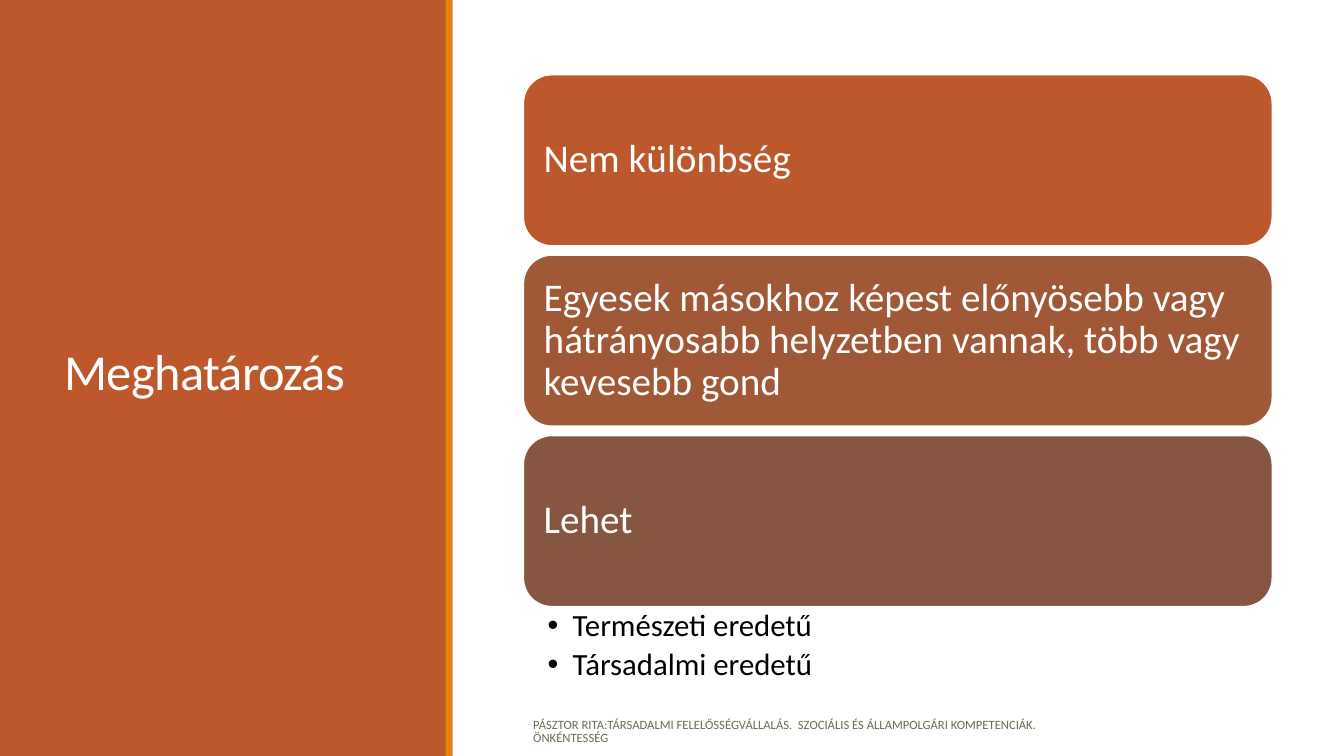
from lxml.etree import SubElement
from pptx import Presentation
from pptx.dml.color import RGBColor
from pptx.enum.shapes import MSO_SHAPE
from pptx.enum.text import MSO_ANCHOR, MSO_AUTO_SIZE, PP_ALIGN
from pptx.oxml.ns import qn
from pptx.util import Emu, Pt

EMU_PER_PX = 9144  # 100 px to the inch
FONT = "Calibri"
WHITE, BLACK, RUST, ORANGE, OLIVE = "FFFFFF", "000000", "BD582C", "E48312", "637052"

CARDS = [
    ("Nem különbség", RUST),
    ("Egyesek másokhoz képest előnyösebb vagy hátrányosabb helyzetben vannak, "
     "több vagy kevesebb gond", "A05837"),
    ("Lehet", "865640"),
]
ORIGINS = ["Természeti eredetű", "Társadalmi eredetű"]
FOOTER = ("PÁSZTOR RITA:TÁRSADALMI FELELŐSSÉGVÁLLALÁS.  SZOCIÁLIS ÉS "
          "ÁLLAMPOLGÁRI KOMPETENCIÁK. ÖNKÉNTESSÉG")
CONTENT_LEFT, CONTENT_WIDTH = 519, 743
CARD_TOP, CARD_HEIGHT, CARD_PITCH = 74, 170, 179


def px(length):
    return Emu(length * EMU_PER_PX)


def color(hex_string):
    return RGBColor.from_string(hex_string)


class SlideBuilder:
    def __init__(self, slide):
        self.slide = slide
        self.shapes = slide.shapes

    def place(self, shape, left, top, width, height):
        shape.left, shape.top = px(left), px(top)
        shape.width, shape.height = px(width), px(height)

    def set_text(self, shape, lines, size, hex_color, anchor=MSO_ANCHOR.MIDDLE,
                 insets=(10, 5, 10, 5), line_spacing=0.9, space_after=0):
        """Set one paragraph per line and format the whole frame alike."""
        frame = shape.text_frame
        frame.text = "\n".join(lines)
        frame.word_wrap = True
        frame.auto_size = MSO_AUTO_SIZE.NONE
        frame.vertical_anchor = anchor
        (frame.margin_left, frame.margin_top,
         frame.margin_right, frame.margin_bottom) = map(px, insets)
        for paragraph in frame.paragraphs:
            paragraph.alignment = PP_ALIGN.LEFT
            paragraph.line_spacing = line_spacing
            paragraph.space_before = Pt(0)
            paragraph.space_after = Pt(space_after)
            for run in paragraph.runs:
                run.font.name = FONT
                run.font.size = Pt(size)
                run.font.color.rgb = color(hex_color)

    def block(self, preset, left, top, width, height, fill):
        shape = self.shapes.add_shape(preset, *map(px, (left, top, width, height)))
        shape.shadow.inherit = False
        shape.fill.solid()
        shape.fill.fore_color.rgb = color(fill)
        shape.line.fill.background()
        return shape

    def panel(self, position, left, width, fill):
        """Add a full-height band behind the placeholders, at a given depth."""
        shape = self.block(MSO_SHAPE.RECTANGLE, left, 0, width, 750, fill)
        self.shapes.element.insert(2 + position, shape.element)

    def title(self, text, left, top, width, height):
        shape = self.shapes.title
        self.place(shape, left, top, width, height)
        self.set_text(shape, [text], 36, WHITE, line_spacing=0.85)
        for run in shape.text_frame.paragraphs[0].runs:
            run._r.get_or_add_rPr().set("spc", "-50")

    def card(self, text, top, fill):
        shape = self.block(MSO_SHAPE.ROUNDED_RECTANGLE, CONTENT_LEFT, top,
                           CONTENT_WIDTH, CARD_HEIGHT, fill)
        shape.line.color.rgb = color(WHITE)
        shape.line.width = Pt(1.25)
        self.set_text(shape, [text], 28, WHITE, insets=(12, 12, 12, 12))

    def bullets(self, lines, left, top, width, height):
        shape = self.slide.placeholders[1]
        self.place(shape, left, top, width, height)
        self.set_text(shape, lines, 22, BLACK, MSO_ANCHOR.TOP, (24, 4, 22, 4),
                      space_after=4.4)
        for paragraph in shape.text_frame.paragraphs:
            properties = paragraph._p.get_or_add_pPr()
            properties.set("marL", str(px(25)))
            properties.set("indent", str(px(-25)))
            SubElement(properties, qn("a:buChar"), char="•")

    def footer(self, text, left, top, width, height):
        shape = self.shapes.add_textbox(*map(px, (left, top, width, height)))
        self.set_text(shape, [text], 9, OLIVE, space_after=6)


def main():
    presentation = Presentation()
    presentation.slide_width, presentation.slide_height = px(1333), px(750)
    builder = SlideBuilder(presentation.slides.add_slide(presentation.slide_layouts[1]))
    builder.panel(0, 0, 443, RUST)
    builder.panel(1, 442, 7, ORANGE)
    builder.title("Meghatározás", 54, 57, 337, 631)
    builder.footer(FOOTER, CONTENT_LEFT, 706, 558, 40)
    for index, (text, fill) in enumerate(CARDS):
        builder.card(text, CARD_TOP + index * CARD_PITCH, fill)
    builder.bullets(ORIGINS, CONTENT_LEFT, 601, CONTENT_WIDTH, 82)
    presentation.save("out.pptx")


if __name__ == "__main__":
    main()
